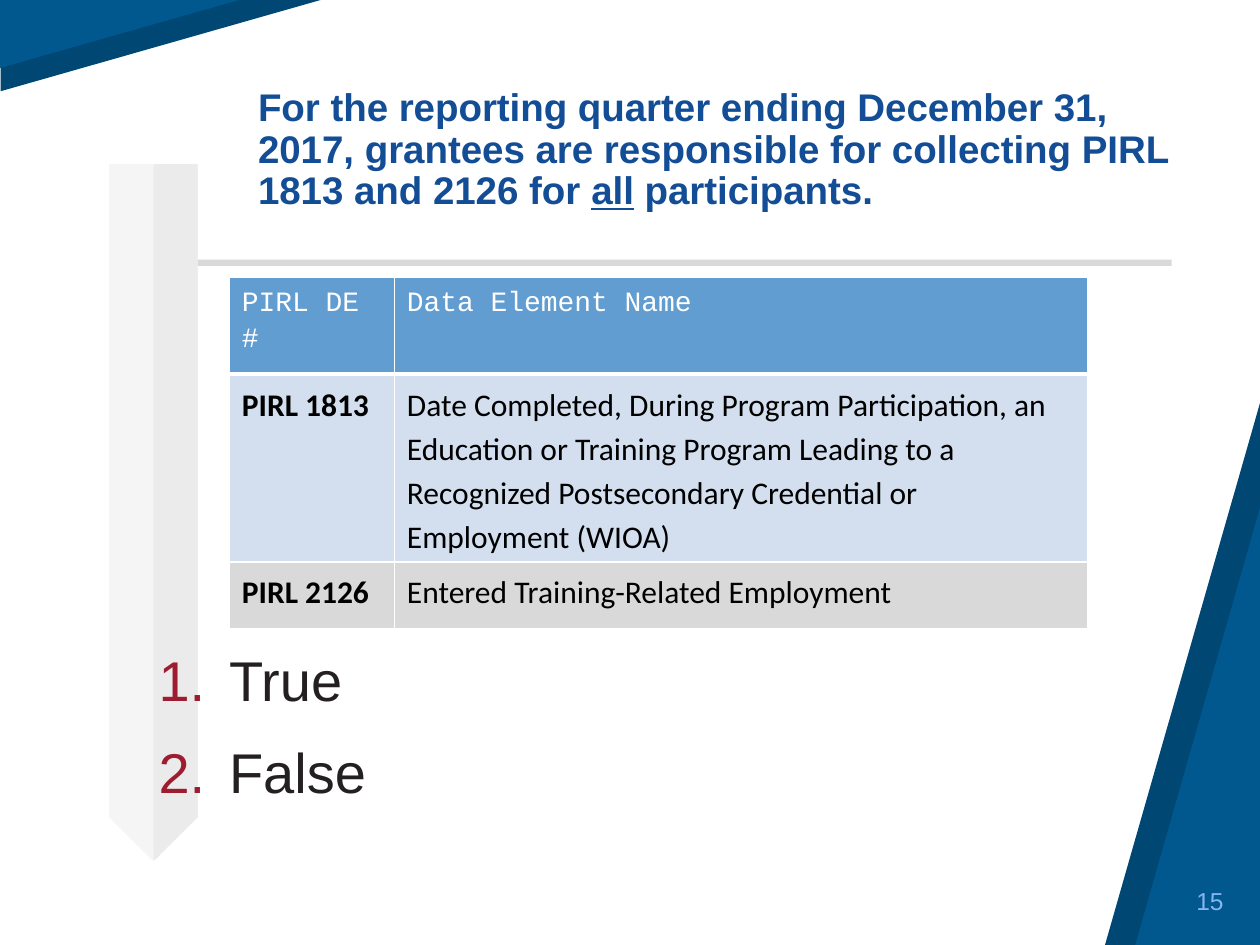
from typing import NamedTuple

from lxml.etree import SubElement
from pptx import Presentation
from pptx.dml.color import RGBColor
from pptx.enum.shapes import MSO_SHAPE as Preset
from pptx.enum.text import MSO_ANCHOR as Anchor, PP_ALIGN as Align
from pptx.oxml import parse_xml
from pptx.oxml.ns import nsdecls, qn
from pptx.util import Inches, Pt

WHITE = RGBColor(0xFF, 0xFF, 0xFF)
BLACK = RGBColor(0, 0, 0)
DEEP_BLUE = RGBColor(0x00, 0x47, 0x73)
BLUE = RGBColor(0x00, 0x58, 0x8F)
TITLE_BLUE = RGBColor(0x12, 0x4D, 0x95)
HEADER_BLUE = RGBColor(0x62, 0x9D, 0xD1)
ROW_BLUE = RGBColor(0xD3, 0xDF, 0xEE)
PALE_BLUE = RGBColor(0x85, 0xB5, 0xF0)
GRAY = RGBColor(0xD9, 0xD9, 0xD9)
LIGHT_GRAY = RGBColor(0xF2, 0xF2, 0xF2)
INK = RGBColor(0x24, 0x20, 0x21)
RED = RGBColor(0x9E, 0x1C, 0x30)


class Box(NamedTuple):
    left: float
    top: float
    width: float
    height: float

    def lengths(self):
        return [Inches(side) for side in self]


class Wedge(NamedTuple):
    box: Box
    color: RGBColor
    in_top_corner: bool


class Row(NamedTuple):
    texts: tuple[str, str]
    height: float
    fill: RGBColor
    color: RGBColor
    font: str
    size: int
    bold_label: bool
    top_line: int
    bottom_line: int


WEDGES = [
    Wedge(Box(8.77, 3.2, 1.23, 4.3), DEEP_BLUE, False),
    Wedge(Box(9.01, 4.03, 0.99, 3.47), BLUE, False),
    Wedge(Box(0.92, -0.92, 0.73, 2.56), DEEP_BLUE, True),
    Wedge(Box(0.68, -0.68, 0.54, 1.9), BLUE, True),
]
ROWS = [
    Row(("PIRL DE #", "Data Element Name"), 0.77, HEADER_BLUE, WHITE,
        "Courier New", 16, False, 1, 3),
    Row(("PIRL 1813", "Date Completed, During Program Participation, an Education or "
         "Training Program Leading to a Recognized Postsecondary Credential or "
         "Employment (WIOA)"), 1.49, ROW_BLUE, BLACK, "Calibri", 18, True, 3, 1),
    Row(("PIRL 2126", "Entered Training-Related Employment"), 0.53, GRAY, BLACK,
        "Calibri", 18, True, 1, 1),
]
COLUMNS = (1.31, 5.5)
TITLE = (("For the reporting quarter ending December 31, 2017, grantees are "
          "responsible for collecting PIRL 1813 and 2126 for ", False),
         ("all", True), (" participants.", False))
ANSWERS = ("True", "False")


def add_plain(slide, preset: Preset, box: Box, color: RGBColor):
    shape = slide.shapes.add_shape(preset, *box.lengths())
    shape.shadow.inherit = False
    shape.fill.solid()
    shape.fill.fore_color.rgb = color
    shape.line.fill.background()
    return shape


def add_wedge(slide, wedge: Wedge) -> None:
    triangle = add_plain(slide, Preset.ISOSCELES_TRIANGLE, wedge.box, wedge.color)
    triangle.adjustments[0] = 1
    if wedge.in_top_corner:
        triangle.rotation = 270
        triangle._element.spPr.find(qn("a:xfrm")).set("flipV", "1")


def add_ribbon(slide) -> None:
    ribbon = add_plain(slide, Preset.DOWN_ARROW, Box(0.87, 1.31, 0.7, 5.52), GRAY)
    ribbon.adjustments[0] = 1
    ribbon.adjustments[1] = 0.5
    ribbon.fill.gradient()
    ribbon.fill.gradient_angle = 0
    halves = ((0.49, LIGHT_GRAY), (0.51, GRAY))
    for stop, (position, color) in zip(ribbon.fill.gradient_stops, halves):
        stop.position = position
        stop.color.rgb = color
    opacities = ("65000", "50000")
    for color, opacity in zip(ribbon._element.spPr.iter(qn("a:srgbClr")), opacities):
        SubElement(color, qn("a:alpha"), val=opacity)


def add_text(slide, box: Box):
    frame = slide.shapes.add_textbox(*box.lengths()).text_frame
    frame.word_wrap = True
    frame.vertical_anchor = Anchor.MIDDLE
    return frame


def style(paragraph, font: str, size: int, color: RGBColor, bold: bool = False) -> None:
    paragraph.font.name = font
    paragraph.font.size = Pt(size)
    paragraph.font.color.rgb = color
    paragraph.font.bold = bold


def add_title(slide) -> None:
    title = add_text(slide, Box(1.95, 0.62, 7.43, 1.15)).paragraphs[0]
    title.line_spacing = 0.9
    style(title, "Arial", 22, TITLE_BLUE, True)
    for words, underlined in TITLE:
        run = title.add_run()
        run.text = words
        if underlined:
            run.font.underline = True


def add_answers(slide) -> None:
    frame = add_text(slide, Box(1.16, 5, 8.05, 1.57))
    for index, words in enumerate(ANSWERS):
        answer = frame.add_paragraph() if index else frame.paragraphs[0]
        answer.text = words
        answer.line_spacing = 0.9
        answer.space_before = Pt(18 if index else 0)
        properties = answer._p.get_or_add_pPr()
        properties.set("marL", str(Inches(0.56)))
        properties.set("indent", str(-Inches(0.56)))
        bullet_color = SubElement(properties, qn("a:buClr"))
        SubElement(bullet_color, qn("a:srgbClr"), val=str(RED))
        SubElement(properties, qn("a:buAutoNum"), type="arabicPeriod")
        style(answer, "Arial", 32, INK)


def set_borders(cell, top: int, bottom: int) -> None:
    properties = cell._tc.get_or_add_tcPr()
    sides = (("L", 1), ("R", 1), ("T", top), ("B", bottom))
    for index, (side, width) in enumerate(sides):
        properties.insert(index, parse_xml(
            f'<a:ln{side} {nsdecls("a")} w="{Pt(width)}"><a:solidFill>'
            f'<a:srgbClr val="{WHITE}"/></a:solidFill></a:ln{side}>'))


def add_elements_table(slide) -> None:
    box = Box(1.82, 2.2, sum(COLUMNS), sum(row.height for row in ROWS))
    table = slide.shapes.add_table(len(ROWS), len(COLUMNS), *box.lengths()).table
    for column, width in zip(table.columns, COLUMNS):
        column.width = Inches(width)
    for row_index, row in enumerate(ROWS):
        table.rows[row_index].height = Inches(row.height)
        for column_index, words in enumerate(row.texts):
            cell = table.cell(row_index, column_index)
            cell.text = words
            cell.fill.solid()
            cell.fill.fore_color.rgb = row.fill
            set_borders(cell, row.top_line, row.bottom_line)
            entry = cell.text_frame.paragraphs[0]
            entry.line_spacing = 1.15
            style(entry, row.font, row.size, row.color,
                  row.bold_label and column_index == 0)


def add_page_number(slide) -> None:
    number = add_text(slide, Box(8.41, 6.95, 1.4, 0.4)).paragraphs[0]
    number.text = "15"
    number.alignment = Align.RIGHT
    style(number, "Arial", 14, PALE_BLUE)


def main() -> None:
    """Build the PIRL true-or-false question slide."""
    deck = Presentation()
    deck.slide_width, deck.slide_height = Inches(10), Inches(7.5)
    slide = deck.slides.add_slide(deck.slide_layouts[6])
    for wedge in WEDGES:
        add_wedge(slide, wedge)
    add_ribbon(slide)
    add_plain(slide, Preset.RECTANGLE, Box(1.57, 2.06, 7.73, 0.05), GRAY)
    add_title(slide)
    add_answers(slide)
    add_page_number(slide)
    add_elements_table(slide)
    deck.save("out.pptx")


if __name__ == "__main__":
    main()
